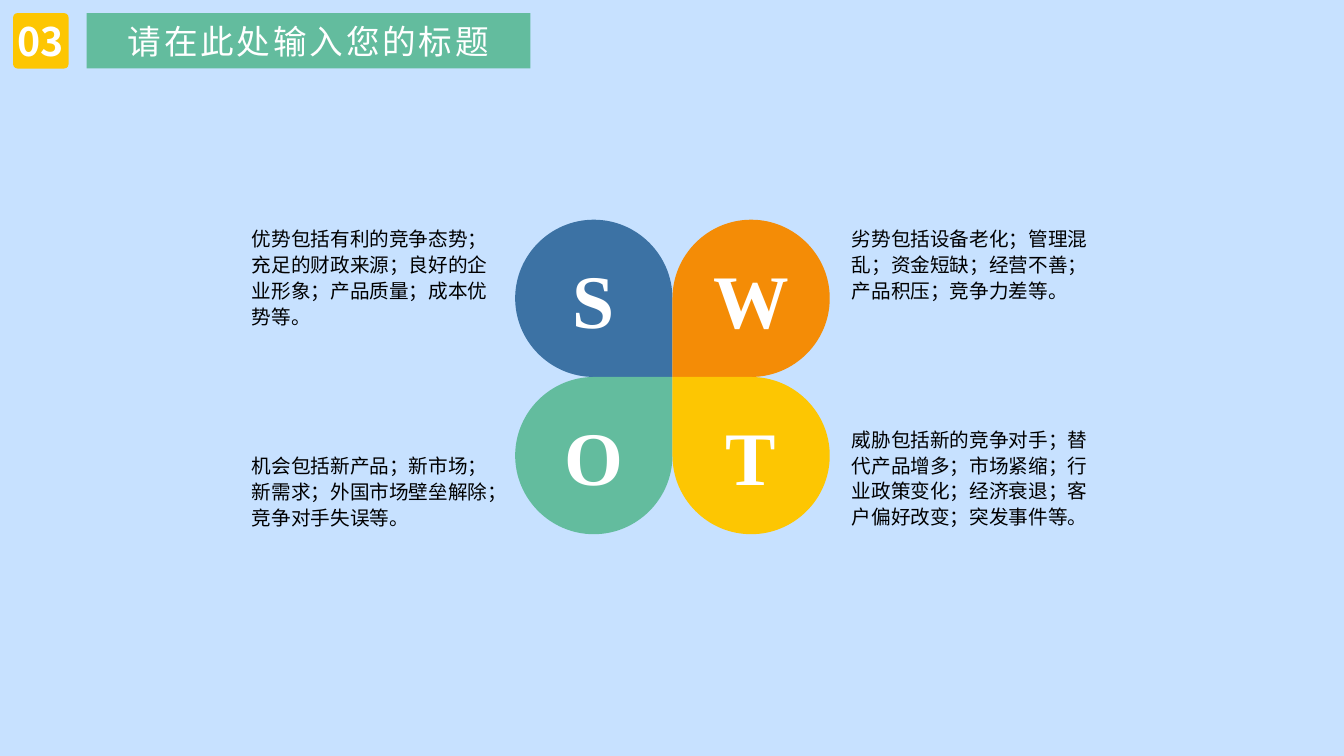
"""Build a SWOT slide with four petals and their notes."""
from dataclasses import dataclass
from math import cos, radians, sin

from lxml import etree
from pptx import Presentation, util as u
from pptx.dml.color import RGBColor
from pptx.enum import shapes as sh, text as tx
from pptx.oxml import ns, parse_xml

HUES = {"sky": "C7E1FF", "blue": "3C72A4", "orange": "F48C06", "green": "63BC9E",
        "gold": "FDC602", "white": "FFFFFF", "black": "000000"}
SANS = "Noto Sans CJK SC"
HUB_X, HUB_Y, RADIUS = 6.67, 3.74, 0.78
NOTE_W = 2.64
BEND = 0.55


@dataclass(frozen=True)
class Petal:
    letter: str
    hue: str
    side: int
    row: int
    start: int
    top: float
    high: float
    note: str


PETALS = [
    Petal("S", "blue", -1, -1, 90, 2.18, 1.14,
          "优势包括有利的竞争态势；充足的财政来源；良好的企业形象；产品质量；成本优势等。"),
    Petal("W", "orange", 1, -1, 180, 2.18, 0.88,
          "劣势包括设备老化；管理混乱；资金短缺；经营不善；产品积压；竞争力差等。"),
    Petal("O", "green", -1, 1, 0, 4.43, 0.88,
          "机会包括新产品；新市场；新需求；外国市场壁垒解除；竞争对手失误等。"),
    Petal("T", "gold", 1, 1, 270, 4.17, 1.14,
          "威胁包括新的竞争对手；替代产品增多；市场紧缩；行业政策变化；经济衰退；客户偏好改变；突发事件等。"),
]


def tint(hue: str) -> RGBColor:
    """Return the named colour."""
    return RGBColor.from_string(HUES[hue])


def paint(shape, hue: str) -> None:
    """Fill a shape flat, with no line or shadow."""
    shape.shadow.inherit = False
    shape.fill.solid()
    shape.fill.fore_color.rgb = tint(hue)
    shape.line.fill.background()


def write(shape, words: str, size: float, face: str, hue: str = "white",
          bold: bool = False, mid: bool = True):
    """Add one run to a shape and return it."""
    frame = shape.text_frame
    frame.word_wrap = True
    frame.auto_size = tx.MSO_AUTO_SIZE.NONE
    frame.vertical_anchor = tx.MSO_ANCHOR.MIDDLE if mid else tx.MSO_ANCHOR.TOP
    para = frame.paragraphs[0]
    para.alignment = tx.PP_ALIGN.CENTER if mid else tx.PP_ALIGN.LEFT
    run = para.add_run()
    run.text = words
    run.font.size, run.font.name, run.font.bold = u.Pt(size), face, bold
    run.font.color.rgb = tint(hue)
    return run


def curve(leaf) -> None:
    """Turn the last three sides of a leaf into quarter circles."""
    path = leaf.element.find(".//" + ns.qn("a:path"))
    dots = path.findall(".//" + ns.qn("a:pt"))
    mid = (int(path.get("w")) / 2, int(path.get("h")) / 2)
    ends = [(int(dot.get("x")), int(dot.get("y"))) for dot in dots]
    lines = path.findall(ns.qn("a:lnTo"))
    for line, first, last in zip(lines[1:4], ends[1:], ends[2:]):
        edge = [a + b - c for a, b, c in zip(first, last, mid)]
        arc = etree.Element(ns.qn("a:cubicBezTo"))
        pulls = [[a + BEND * (b - a) for a, b in zip(end, edge)] for end in (first, last)]
        for x, y in (*pulls, last):
            etree.SubElement(arc, ns.qn("a:pt"), x=str(round(x)), y=str(round(y)))
        path.replace(line, arc)


def add_petal(slide, petal: Petal) -> None:
    """Draw a round petal whose one sharp corner meets the hub."""
    mid_x, mid_y = HUB_X + petal.side * RADIUS, HUB_Y + petal.row * RADIUS
    turns = [radians(petal.start + 90 * step) for step in range(4)]
    dots = [(u.Inches(mid_x + RADIUS * cos(turn)), u.Inches(mid_y + RADIUS * sin(turn)))
            for turn in turns]
    pen = slide.shapes.build_freeform(u.Inches(HUB_X), u.Inches(HUB_Y))
    pen.add_line_segments(dots, close=True)
    leaf = pen.convert_to_shape()
    curve(leaf)
    paint(leaf, petal.hue)
    write(leaf, petal.letter, 54, "Times New Roman", bold=True)


def add_note(slide, petal: Petal) -> None:
    """Place the note beside its petal."""
    left = 2.4 if petal.side < 0 else 8.35
    box = slide.shapes.add_textbox(u.Inches(left), u.Inches(petal.top),
                                   u.Inches(NOTE_W), u.Inches(petal.high))
    write(box, petal.note, 14, "Arial", "black", mid=False)
    box.text_frame.auto_size = tx.MSO_AUTO_SIZE.SHAPE_TO_FIT_TEXT
    box.text_frame.paragraphs[0].line_spacing = 1.1


def add_tile(slide) -> None:
    """Draw the number tile."""
    tile = slide.shapes.add_shape(sh.MSO_SHAPE.ROUNDED_RECTANGLE, u.Inches(0.13),
                                  u.Inches(0.13), u.Inches(0.55), u.Inches(0.55))
    tile.adjustments[0] = 0.08
    paint(tile, "gold")
    frame = tile.text_frame
    frame.margin_left = frame.margin_right = frame.margin_top = frame.margin_bottom = 0
    write(tile, "03", 28, SANS, bold=True)


def set_title(slide) -> None:
    """Shape the title as a rounded bar."""
    title = slide.shapes.title
    title.left, title.top = u.Inches(0.86), u.Inches(0.13)
    title.width, title.height = u.Inches(4.4), u.Inches(0.55)
    form = parse_xml(f'<a:prstGeom {ns.nsdecls("a")} prst="roundRect"><a:avLst>'
                     '<a:gd name="adj" fmla="val 9100"/></a:avLst></a:prstGeom>')
    title.element.spPr.find(ns.qn("a:xfrm")).addnext(form)
    paint(title, "green")
    run = write(title, "请在此处输入您的标题", 24, SANS)
    run.font._element.set("spc", "200")


def main() -> None:
    """Build and save the slide."""
    deck = Presentation()
    deck.slide_width, deck.slide_height = u.Inches(13.33), u.Inches(7.5)
    slide = deck.slides.add_slide(deck.slide_layouts[5])
    slide.background.fill.solid()
    slide.background.fill.fore_color.rgb = tint("sky")
    for petal in PETALS:
        add_petal(slide, petal)
    for petal in PETALS:
        add_note(slide, petal)
    add_tile(slide)
    set_title(slide)
    deck.save("out.pptx")


if __name__ == "__main__":
    main()
